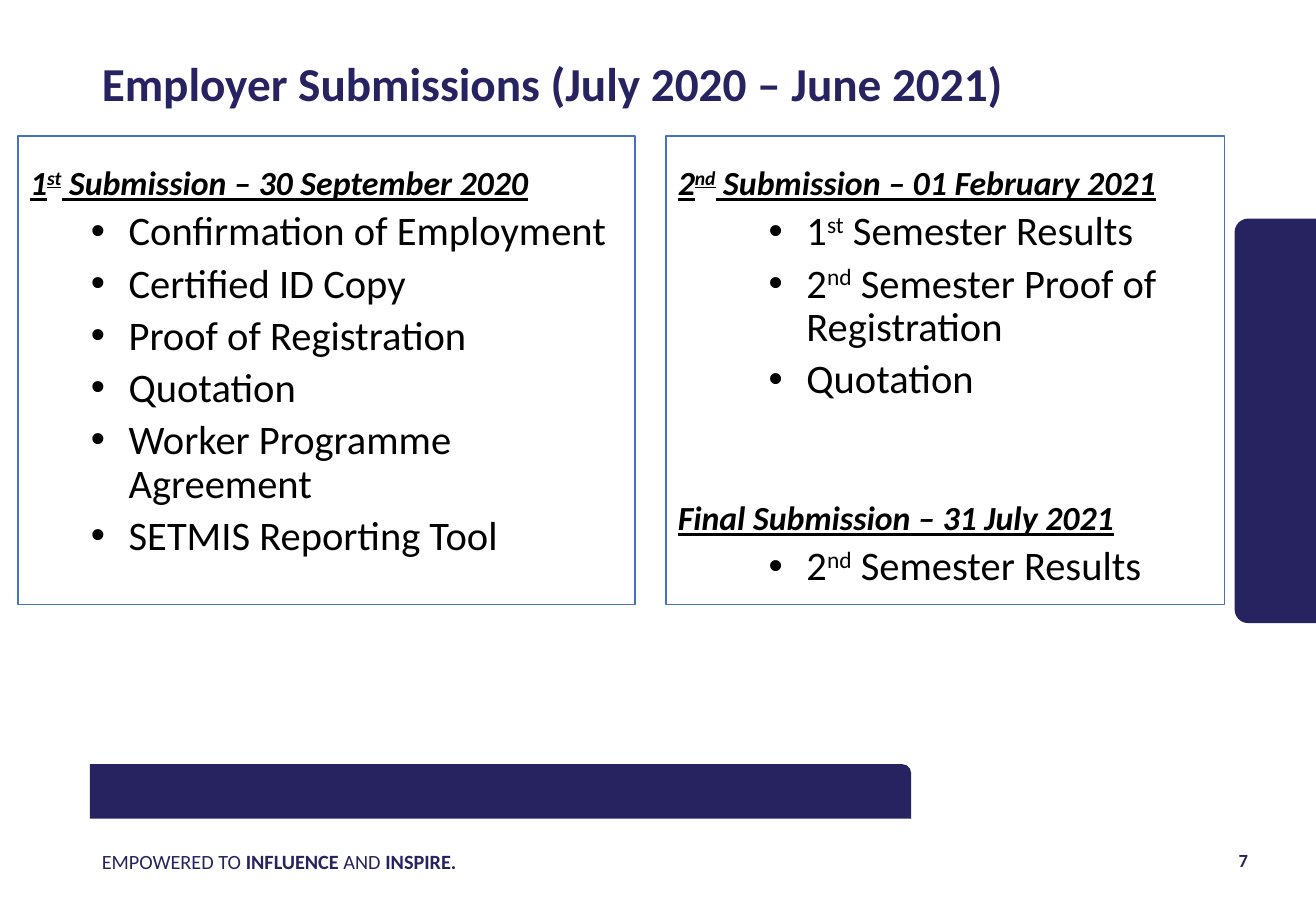
from lxml import etree
from pptx import Presentation
from pptx.dml.color import RGBColor as Rgb
from pptx.enum.shapes import MSO_SHAPE as Form
from pptx.enum.text import MSO_ANCHOR as Anchor, PP_ALIGN as Align
from pptx.oxml.ns import qn
from pptx.util import Cm, Pt

HUES = {"navy": "272361", "edge": "4472C4", "white": "FFFFFF", "black": "000000"}
HEAD = {"size": Pt(20), "bold": True, "italic": True, "underline": True}
ITEM = {"size": Pt(24)}
FIRST = [
    ("1^st^ Submission – 30 September 2020",
     ["Confirmation of Employment", "Certified ID Copy", "Proof of Registration",
      "Quotation", "Worker Programme Agreement", "SETMIS Reporting Tool"]),
]
LATER = [
    ("2^nd^ Submission – 01 February 2021",
     ["1^st^ Semester Results", "2^nd^ Semester Proof of Registration", "Quotation"]),
    ("Final Submission – 31 July 2021", ["2^nd^ Semester Results"]),
]


def style(item, values):
    """Set each named value on the item."""
    for name, value in values.items():
        setattr(item, name, value)


def write(para, text, font, hue, strong=False):
    """Add runs; parts between carets are bold if strong, else raised."""
    for i, part in enumerate(text.split("^")):
        run = para.add_run()
        run.text = part
        style(run.font, {"name": "Calibri", **font})
        run.font.color.rgb = Rgb.from_string(HUES[hue])
        if i % 2 and strong:
            run.font.bold = True
        elif i % 2:
            run.font._element.set("baseline", "30000")


def block(slide, form, box, fill, line=None):
    """Add a filled shape in the box, with an outline if a hue is given."""
    shape = slide.shapes.add_shape(form, *map(Cm, box))
    shape.shadow.inherit = False
    shape.fill.solid()
    shape.fill.fore_color.rgb = Rgb.from_string(HUES[fill])
    if line:
        shape.line.color.rgb = Rgb.from_string(HUES[line])
        shape.line.width = Pt(1)
    else:
        shape.line.fill.background()
    return shape


def label(slide, box, text, font, **form):
    """Add one line of navy text, centred vertically in the box."""
    frame = slide.shapes.add_textbox(*map(Cm, box)).text_frame
    style(frame, {"word_wrap": True, "vertical_anchor": Anchor.MIDDLE})
    style(frame.paragraphs[0], form)
    write(frame.paragraphs[0], text, font, "navy", strong=True)


def bullet(para, left):
    """Give the paragraph a hanging bullet with its text at left."""
    props = para._p.get_or_add_pPr()
    props.set("marL", str(Cm(left)))
    props.set("indent", str(Cm(-0.79)))
    etree.SubElement(props, qn("a:buFont")).set("typeface", "Arial")
    etree.SubElement(props, qn("a:buChar")).set("char", "•")


def panel(slide, box, groups, left):
    """Draw an outlined box of headings, each with its bulleted items."""
    frame = block(slide, Form.RECTANGLE, box, "white", "edge").text_frame
    style(frame, {"word_wrap": True, "vertical_anchor": Anchor.TOP})
    for i, (head, items) in enumerate(groups):
        para = frame.add_paragraph() if i else frame.paragraphs[0]
        style(para, {"alignment": Align.JUSTIFY, "line_spacing": 1.5,
                     "space_before": Pt(44 if i else 0)})
        write(para, head, HEAD, "black")
        for item in items:
            para = frame.add_paragraph()
            bullet(para, left)
            style(para, {"level": 1, "alignment": Align.LEFT,
                         "line_spacing": 0.9, "space_before": Pt(5)})
            write(para, item, ITEM, "black")


def decor(slide):
    """Draw the navy tab at the right edge and the navy bar at the foot."""
    tab = block(slide, Form.ROUND_2_SAME_RECTANGLE, (22.43, 7.95, 8.46, 1.7), "navy")
    tab.rotation = 270
    block(slide, Form.ROUND_1_RECTANGLE, (1.88, 15.98, 17.17, 1.14), "navy")


def main():
    """Build the slide and save it."""
    deck = Presentation()
    style(deck, {"slide_width": Cm(27.51), "slide_height": Cm(19.05)})
    slide = deck.slides.add_slide(deck.slide_layouts[6])
    decor(slide)
    panel(slide, (0.38, 2.84, 12.9, 9.8), FIRST, 2.06)
    panel(slide, (13.92, 2.84, 11.68, 9.8), LATER, 2.69)
    label(slide, (1.88, 17.53, 16.51, 0.97),
          "EMPOWERED TO ^INFLUENCE^ AND ^INSPIRE.^", {"size": Pt(12)})
    label(slide, (19.43, 17.48, 6.91, 1.02), "7",
          {"size": Pt(11), "bold": True}, alignment=Align.RIGHT)
    label(slide, (1.88, 1.02, 23.72, 1.55),
          "Employer Submissions (July 2020 – June 2021)",
          {"size": Pt(28), "bold": True}, line_spacing=0.9)
    deck.save("out.pptx")


if __name__ == "__main__":
    main()
